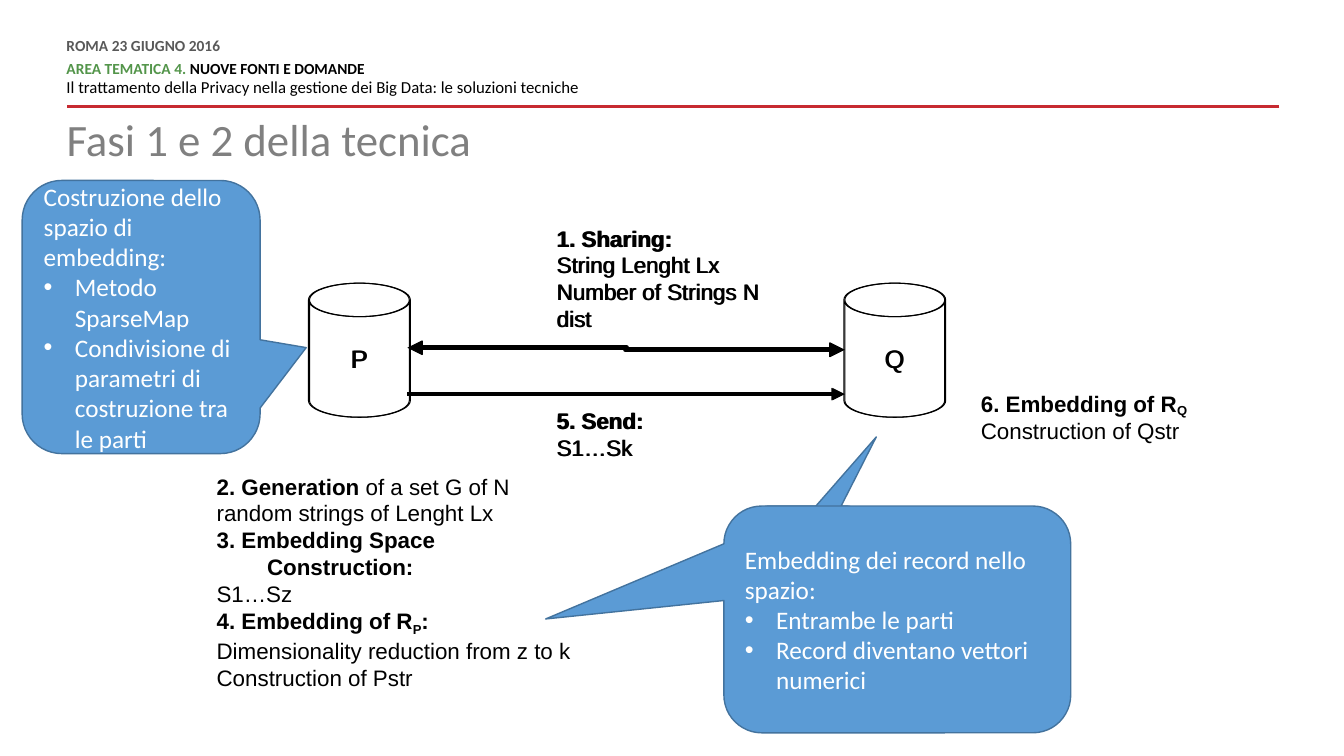
from lxml import etree
from pptx import Presentation
from pptx.dml.color import RGBColor
from pptx.enum.shapes import MSO_CONNECTOR, MSO_SHAPE
from pptx.enum.text import MSO_ANCHOR, MSO_AUTO_SIZE, PP_ALIGN
from pptx.oxml.ns import qn
from pptx.util import Inches, Pt

CAN = MSO_SHAPE.CAN
CALLOUT = MSO_SHAPE.ROUNDED_RECTANGULAR_CALLOUT
STRAIGHT, ELBOW = MSO_CONNECTOR.STRAIGHT, MSO_CONNECTOR.ELBOW
TOP, MIDDLE = MSO_ANCHOR.TOP, MSO_ANCHOR.MIDDLE
LEFT, CENTER = PP_ALIGN.LEFT, PP_ALIGN.CENTER
FIT_SHAPE, NO_FIT = MSO_AUTO_SIZE.SHAPE_TO_FIT_TEXT, MSO_AUTO_SIZE.NONE

BLACK = RGBColor(0x00, 0x00, 0x00)
WHITE = RGBColor(0xFF, 0xFF, 0xFF)
RED = RGBColor(0xC7, 0x2A, 0x31)
GREEN = RGBColor(0x53, 0x95, 0x4A)
DARK_GRAY = RGBColor(0x59, 0x59, 0x59)
GRAY = RGBColor(0x80, 0x80, 0x80)
BLUE = RGBColor(0x5B, 0x9B, 0xD5)
DARK_BLUE = RGBColor(0x43, 0x73, 0x9E)


class ProtocolSlide:
    """Draws the elements of the protocol slide in one shared style."""

    def __init__(self, slide):
        self.slide = slide

    def run(self, paragraph, text, size, color, font="Arial", bold=False, baseline=0):
        """Add one formatted run."""
        run = paragraph.add_run()
        run.text = text
        run.font.name, run.font.size, run.font.bold = font, Pt(size), bold
        run.font.color.rgb = color
        if baseline:
            run.font._element.set("baseline", str(baseline * 1000))

    def paragraphs(self, frame, count):
        """Return the frame's first paragraph followed by new ones."""
        return [frame.paragraphs[0]] + [frame.add_paragraph() for _ in range(count - 1)]

    def hang(self, paragraph, indent, bullet=None):
        """Give a paragraph a hanging indent and an optional bullet."""
        properties = paragraph._p.get_or_add_pPr()
        properties.set("marL", str(Inches(indent)))
        properties.set("indent", str(-Inches(indent)))
        if bullet:
            etree.SubElement(properties, qn("a:buFont")).set("typeface", "Arial")
            etree.SubElement(properties, qn("a:buChar")).set("char", bullet)

    def no_margins(self, frame):
        """Remove the frame's inner margins."""
        frame.margin_left = frame.margin_right = 0
        frame.margin_top = frame.margin_bottom = 0

    def box(self, left, top, width, height):
        """Add a wrapping text box and return its frame."""
        frame = self.slide.shapes.add_textbox(
            Inches(left), Inches(top), Inches(width), Inches(height)).text_frame
        frame.word_wrap = True
        frame.auto_size = FIT_SHAPE
        return frame

    def title(self, text):
        """Place and format the title placeholder."""
        title = self.slide.shapes.title
        title.left, title.top = Inches(0.66), Inches(1.17)
        title.width, title.height = Inches(11.7), Inches(0.81)
        frame = title.text_frame
        frame.vertical_anchor = TOP
        frame.auto_size = NO_FIT
        self.no_margins(frame)
        frame.paragraphs[0].alignment = LEFT
        frame.paragraphs[0].line_spacing = 0.9
        self.run(frame.paragraphs[0], text, 32, GRAY, "Calibri")

    def header(self, date, area, theme, talk):
        """Add the event header and the rule beneath it."""
        frame = self.box(0.66, 0.39, 8.34, 0.59)
        self.no_margins(frame)
        date_line, area_line, talk_line = self.paragraphs(frame, 3)
        for line in (date_line, area_line, talk_line):
            line.line_spacing = Pt(10.8)
        date_line.space_after = talk_line.space_after = Pt(6)
        talk_line.space_before = Pt(3)
        self.run(date_line, date, 11, DARK_GRAY, "Calibri", True)
        self.run(area_line, area, 11, GREEN, "Calibri", True)
        self.run(area_line, theme, 11, BLACK, "Calibri", True)
        self.run(talk_line, talk, 12, BLACK, "Calibri")
        self.line(STRAIGHT, (12.69, 1.06), (0.66, 1.06), RED, 2)

    def step(self, left, top, width, height, lines, indent=0):
        """Add a protocol step; each line is a list of (text, bold, baseline)."""
        frame = self.box(left, top, width, height)
        for paragraph, pieces in zip(self.paragraphs(frame, len(lines)), lines):
            if indent:
                self.hang(paragraph, indent)
            for text, bold, baseline in pieces:
                self.run(paragraph, text, 16, BLACK, bold=bold, baseline=baseline)

    def shape(self, preset, left, top, width, height, adjustments, line, weight):
        """Add a shadowless outlined shape."""
        shape = self.slide.shapes.add_shape(
            preset, Inches(left), Inches(top), Inches(width), Inches(height))
        shape.shadow.inherit = False
        for index, value in enumerate(adjustments):
            shape.adjustments[index] = value
        shape.line.color.rgb, shape.line.width = line, Pt(weight)
        shape.text_frame.vertical_anchor = MIDDLE
        return shape

    def party(self, left, name):
        """Add the cylinder of one party."""
        can = self.shape(CAN, left, 2.81, 1, 1.33, [0.332], BLACK, 0.75)
        can.fill.background()
        can.text_frame.word_wrap = False
        label = can.text_frame.paragraphs[0]
        label.alignment = CENTER
        self.run(label, name, 18, BLACK)

    def callout(self, left, top, width, height, tip, heading=None, points=()):
        """Add a blue callout with an optional heading and bullets."""
        callout = self.shape(CALLOUT, left, top, width, height, (*tip, 0.167), DARK_BLUE, 1)
        callout.fill.solid()
        callout.fill.fore_color.rgb = BLUE
        if not heading:
            return
        texts = [heading, *points]
        for index, paragraph in enumerate(self.paragraphs(callout.text_frame, len(texts))):
            paragraph.alignment = LEFT
            if index:
                self.hang(paragraph, 0.31, "•")
            self.run(paragraph, texts[index], 18, WHITE, "Calibri")

    def line(self, kind, start, end, color, weight, arrows=()):
        """Add a connector with optional headEnd and tailEnd arrows."""
        connector = self.slide.shapes.add_connector(
            kind, *(Inches(value) for value in (*start, *end)))
        connector.line.color.rgb, connector.line.width = color, Pt(weight)
        for arrow in arrows:
            etree.SubElement(connector.line._get_or_add_ln(), qn("a:" + arrow)).set("type", "triangle")
        etree.SubElement(connector._element.spPr, qn("a:effectLst"))


def main():
    """Build and save the slide."""
    deck = Presentation()
    deck.slide_width, deck.slide_height = Inches(13.33), Inches(7.5)
    page = ProtocolSlide(deck.slides.add_slide(deck.slide_layouts[5]))

    page.header("ROMA 23 GIUGNO 2016", "AREA TEMATICA 4. ", "NUOVE FONTI E DOMANDE",
                "Il trattamento della Privacy nella gestione dei Big Data: le soluzioni tecniche")
    page.title("Fasi 1 e 2 della tecnica")
    page.callout(7.51, 5.02, 1, 0.67, (0.682, -1.523))

    sharing = [[("1. Sharing:", True, 0)], [("String Lenght Lx", False, 0)],
               [("Number of Strings N", False, 0)], [("dist", False, 0)]]
    sending = [[("5. Send:", True, 0)], [("S1…Sk", False, 0)]]
    for shift in (0, 0.01):
        page.party(3.06 + shift, "P")
        page.party(8.37 + shift, "Q")
        page.line(ELBOW, (4.04 + shift, 3.45), (8.37 + shift, 3.47), BLACK, 3.5,
                  ("headEnd", "tailEnd"))
        page.step(5.42 + shift, 2.18, 3.15, 1.17, sharing)
        page.step(5.42 + shift, 3.99, 3.23, 0.9, sending, 0.5)
        page.line(STRAIGHT, (4.04 + shift, 3.91), (8.37 + shift, 3.91), BLACK, 3, ("tailEnd",))

    page.step(2.05, 4.64, 3.78, 2.24, [
        [("2. Generation", True, 0), (" of a set G of N", False, 0)],
        [("random strings of Lenght Lx", False, 0)],
        [("3. Embedding Space Construction:", True, 0)],
        [("S1…Sz", False, 0)],
        [("4. Embedding of R", True, 0), ("P", True, -25), (":", True, 0)],
        [("Dimensionality reduction from z to k", False, 0)],
        [("Construction of Pstr", False, 0)]], 0.5)
    page.step(9.63, 3.82, 2.4, 0.64, [
        [("6. Embedding of R", True, 0), ("Q", True, -12)],
        [("Construction of Qstr", False, 0)]])

    page.callout(0.22, 1.79, 2.36, 2.71, (0.694, 0.112),
                 "Costruzione dello spazio di embedding:",
                 ["Metodo SparseMap", "Condivisione di parametri di costruzione tra le parti"])
    page.callout(7.18, 5.02, 3.44, 2.25, (-1.014, -0.002),
                 "Embedding dei record nello spazio:",
                 ["Entrambe le parti", "Record diventano vettori numerici"])
    deck.save("out.pptx")


if __name__ == "__main__":
    main()
